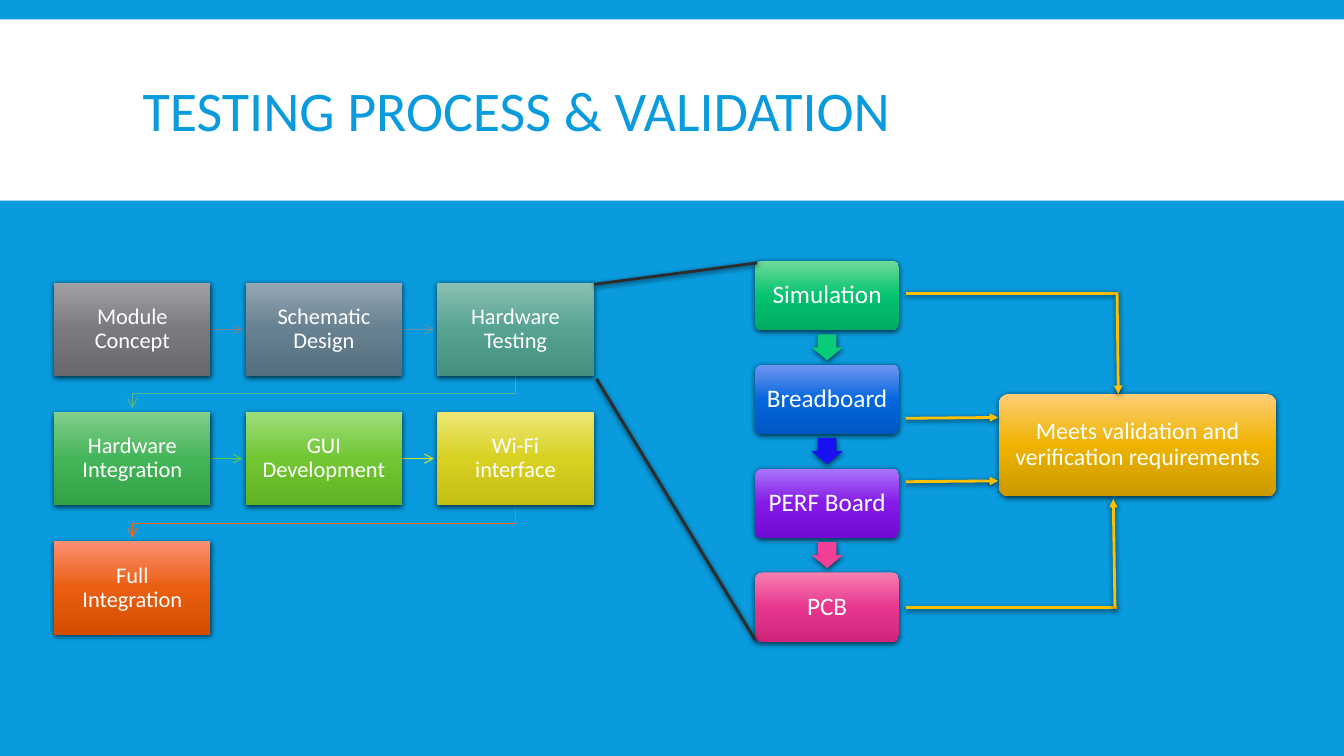
from lxml import etree
from pptx import Presentation, util as u
from pptx.dml.color import RGBColor
from pptx.enum import shapes, text
from pptx.oxml import ns


def hue(code):
    """Turn a hex string into a colour."""
    return RGBColor.from_string(code)


def add(node, tag, **attrs):
    """Append a drawing element with attributes."""
    return etree.SubElement(node, ns.qn("a:" + tag), {k: str(v) for k, v in attrs.items()})


class Deck:
    """Style and current slide, on a grid of 160 columns by 90 rows."""
    font, blue, white, gold, dark = "Calibri", "099BDD", "FFFFFF", "FFC000", "2C2C2C"

    def __init__(self):
        """Open a blank slide with a blue ground."""
        self.prs = Presentation()
        self.prs.slide_width, self.prs.slide_height = u.Inches(13.33), u.Inches(7.5)
        self.slide = self.prs.slides.add_slide(self.prs.slide_layouts[6])
        self.items = self.slide.shapes
        ground = self.slide.background.fill
        ground.solid()
        ground.fore_color.rgb = hue(self.blue)

    def grid(self, *cells):
        """Turn grid cells into lengths."""
        return [u.Inches(c / 12) for c in cells]

    def shade(self, shape):
        """Give a shape a soft shadow below it."""
        props = shape._element.spPr
        effects = props.find(ns.qn("a:effectLst"))
        if effects is None:
            effects = add(props, "effectLst")
        shadow = add(effects, "outerShdw", blurRad=u.Pt(4), dist=u.Pt(1.2),
                     dir=5400000, algn="ctr", rotWithShape=0)
        add(add(shadow, "srgbClr", val="000000"), "alpha", val=68000)

    def label(self, shape, words, size, color, align, space, inset):
        """Set the text of a shape."""
        frame = shape.text_frame
        frame.text = words
        frame.word_wrap = True
        frame.vertical_anchor = text.MSO_ANCHOR.MIDDLE
        frame.margin_left = frame.margin_right = u.Inches(inset)
        frame.margin_top = frame.margin_bottom = u.Inches(inset)
        para = frame.paragraphs[0]
        para.alignment, para.line_spacing = align, space
        font = para.runs[0].font
        font.name, font.size, font.color.rgb = self.font, u.Pt(size), hue(color)

    def title(self, words, *area):
        """Add the slide title."""
        box = self.items.add_textbox(*self.grid(*area))
        self.label(box, words, 40, self.blue, text.PP_ALIGN.LEFT, 0.85, 0.1)

    def shape(self, kind, color, *area):
        """Add a plain filled shape."""
        shape = self.items.add_shape(kind, *self.grid(*area))
        shape.shadow.inherit = False
        shape.fill.solid()
        shape.fill.fore_color.rgb = hue(color)
        shape.line.fill.background()
        return shape

    def card(self, words, tones, size, *area, rounded=True):
        """Add a labelled box with a three-tone gradient."""
        kind = shapes.MSO_SHAPE.ROUNDED_RECTANGLE if rounded else shapes.MSO_SHAPE.RECTANGLE
        card = self.shape(kind, tones[1], *area)
        if rounded:
            card.adjustments[0] = 0.1
        card.fill.gradient()
        card.fill.gradient_angle = 270
        stops = card._element.spPr.find(ns.qn("a:gradFill")).find(ns.qn("a:gsLst"))
        stops.clear()
        for place, tone in zip((0, 50000, 100000), tones):
            add(add(stops, "gs", pos=place), "srgbClr", val=tone)
        self.shade(card)
        self.label(card, words, size, self.white, text.PP_ALIGN.CENTER, 0.9,
                   0.07 if rounded else 0.12)

    def arrow(self, color, *area):
        """Add a block arrow that points down."""
        arrow = self.shape(shapes.MSO_SHAPE.DOWN_ARROW, color, *area)
        arrow.adjustments[0], arrow.adjustments[1] = 0.6, 0.5
        self.shade(arrow)

    def stroke(self, shape, color, width, head):
        """Style a line and its arrowhead."""
        shape.line.color.rgb, shape.line.width = hue(color), u.Pt(width)
        if head:
            add(shape._element.spPr.find(ns.qn("a:ln")), "tailEnd", type=head)

    def line(self, color, *ends, width=2, head=None, shadow=True):
        """Add a straight line."""
        line = self.items.add_connector(shapes.MSO_CONNECTOR.STRAIGHT, *self.grid(*ends))
        self.stroke(line, color, width, head)
        if shadow:
            self.shade(line)
        else:
            add(line._element.spPr, "effectLst")

    def bend(self, color, *points):
        """Add a thin bent arrow."""
        start, *rest = [self.grid(*p) for p in points]
        pen = self.items.build_freeform(*start)
        pen.add_line_segments(rest, close=False)
        bend = pen.convert_to_shape()
        bend.shadow.inherit = False
        bend.fill.background()
        self.stroke(bend, color, 0.75, "arrow")


def main():
    """Build the slide."""
    deck = Deck()
    deck.shape(shapes.MSO_SHAPE.RECTANGLE, deck.white, 0, 2.3, 160, 21.6)
    deck.title("TESTING PROCESS & VALIDATION", 15.8, 3.7, 128.4, 19.8)

    steps = [
        ("Module Concept", ("A1A1A5", "79797F", "68686D"), "828288"),
        ("Schematic Design", ("95A6B2", "678191", "566F7F"), "6C919E"),
        ("Hardware Testing", ("8BC0B3", "56A392", "459080"), "57B489"),
        ("Hardware Integration", ("82CF8C", "44B458", "34A247"), "5BCA42"),
        ("GUI Development", ("9CDE7B", "72C633", "61B323"), "D0DF2C"),
        ("Wi-Fi interface", ("ECE776", "D8D122", "C5BE12"), "F56617"),
        ("Full Integration", ("FB9074", "E95E10", "D64D01"), None)]
    left, top, wide, high = 6.45, 33.65, 18.6, 11.1
    for i, (words, tones, link) in enumerate(steps):
        row, col = divmod(i, 3)
        x, y = left + col * 22.8, top + row * 15.4
        if link and col < 2:
            mid = y + high / 2
            deck.line(link, x + wide, mid, x + 22.4, mid, width=0.75, head="arrow", shadow=False)
        elif link:
            far, near, base = x + wide / 2, left + wide / 2, y + high
            deck.bend(link, (far, base), (far, base + 2.15), (near, base + 2.15),
                      (near, base + 3.85))
        deck.card(words, tones, 16, x, y, wide, high, rounded=False)

    stages = [
        ("Simulation", ("72DA9A", "03C370", "00AA61"), "08CC78"),
        ("Breadboard", ("7295F1", "0567DD", "0058C3"), "1911F2"),
        ("PERF Board", ("A975F9", "851AE6", "7309D3"), "F24099"),
        ("PCB", ("F87EB1", "E6378F", "D0257B"), None)]
    for i, (words, tones, link) in enumerate(stages):
        y = 31.05 + i * 12.37
        deck.card(words, tones, 18, 89.9, y, 17.1, 8.25)
        if link:
            deck.arrow(link, 96.6, y + 8.75, 3.7, 3.1)

    deck.card("Meets validation and verification requirements",
              ("FFCE77", "EEB300", "CC9A00"), 17, 118.9, 46.9, 33, 12.2)

    for ends in ((71, 45.1, 89.9, 76.2), (70.7, 33.85, 90.1, 31.3)):
        deck.line(deck.dark, *ends)
    for y in (34.9, 72.35):
        deck.line(deck.gold, 107.8, y, 133, y)
    for ends in ((107.8, 49.8, 118.8, 49.7), (107.8, 57.35, 118.8, 57.25),
                 (132.95, 34.8, 133.1, 46.9), (132.7, 72.35, 132.5, 59.4)):
        deck.line(deck.gold, *ends, head="triangle")

    deck.prs.save("out.pptx")


if __name__ == "__main__":
    main()
